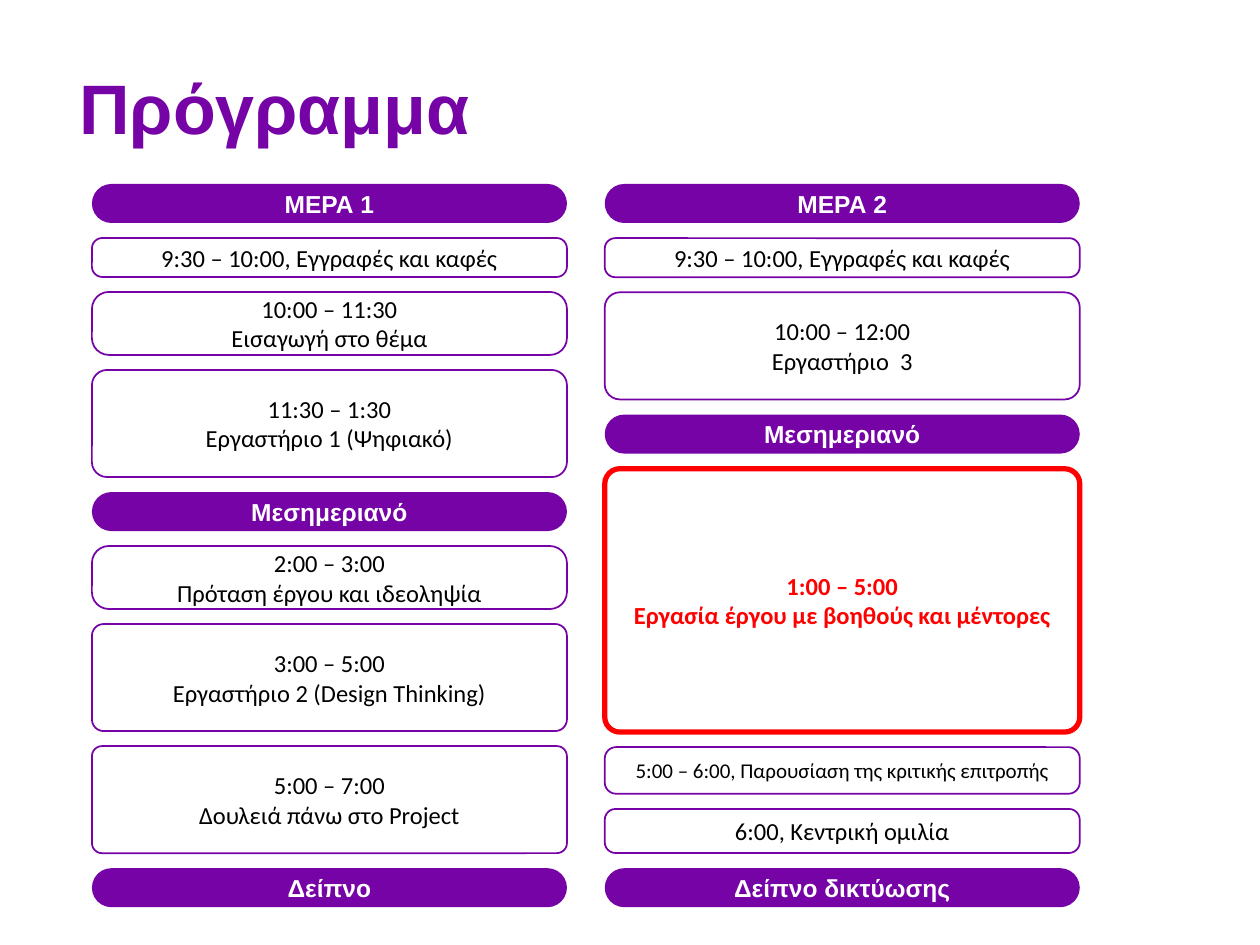
from pptx import Presentation
from pptx.dml.color import RGBColor
from pptx.enum.shapes import MSO_SHAPE
from pptx.enum.text import MSO_ANCHOR, MSO_AUTO_SIZE, PP_ALIGN
from pptx.util import Inches, Pt

ROUNDED = MSO_SHAPE.ROUNDED_RECTANGLE
TOP, MIDDLE = MSO_ANCHOR.TOP, MSO_ANCHOR.MIDDLE
NO_FIT = MSO_AUTO_SIZE.NONE
LEFT, CENTER = PP_ALIGN.LEFT, PP_ALIGN.CENTER

TITLE_ONLY = 5
COLUMNS, ROWS = 100, 75
COLORS = {"purple": "7503A6", "white": "FFFFFF", "black": "000000", "red": "FF0000"}
HEADING = {"name": "Arial", "size": Pt(14), "bold": True}
BODY = {"name": "Calibri", "size": Pt(14), "bold": False}
STYLES = {
    "title": {"font": HEADING | {"size": Pt(40)}, "text": "purple"},
    "band": {"font": HEADING, "text": "white", "fill": "purple", "line": None},
    "session": {"font": BODY, "text": "black", "fill": "white", "line": ("purple", 1)},
    "small": {"font": BODY | {"size": Pt(12)}, "text": "black", "fill": "white",
              "line": ("purple", 1)},
    "highlight": {"font": BODY | {"bold": True}, "text": "red", "fill": "white",
                  "line": ("red", 3)},
}

SCHEDULE_TOP, SCHEDULE_BOTTOM, DAY_WIDTH = 14.6, 72, 37.7
BAND_HEIGHT, BAND_RADIUS = 3.1, 1.55
DAYS = [
    (7.3, [
        ("band", BAND_HEIGHT, BAND_RADIUS, ["ΜΕΡΑ 1"]),
        ("session", 3.1, 0.83, ["9:30 – 10:00, Εγγραφές και καφές"]),
        ("session", 5, 1.35, ["10:00 – 11:30", "Εισαγωγή στο θέμα"]),
        ("session", 8.5, 1.2, ["11:30 – 1:30", "Εργαστήριο 1 (Ψηφιακό)"]),
        ("band", BAND_HEIGHT, BAND_RADIUS, ["Μεσημεριανό"]),
        ("session", 5, 1.35, ["2:00 – 3:00", "Πρόταση έργου και ιδεοληψία"]),
        ("session", 8.5, 0.93, ["3:00 – 5:00", "Εργαστήριο 2 (Design Thinking)"]),
        ("session", 8.5, 0.8, ["5:00 – 7:00", "Δουλειά πάνω στο Project"]),
        ("band", BAND_HEIGHT, BAND_RADIUS, ["Δείπνο"]),
    ]),
    (48, [
        ("band", BAND_HEIGHT, BAND_RADIUS, ["ΜΕΡΑ 2"]),
        ("session", 3.1, 0.83, ["9:30 – 10:00, Εγγραφές και καφές"]),
        ("session", 8.5, 1.2, ["10:00 – 12:00", "Εργαστήριο  3"]),
        ("band", BAND_HEIGHT, BAND_RADIUS, ["Μεσημεριανό"]),
        ("highlight", 20.9, 1.2, ["1:00 – 5:00", "Εργασία έργου με βοηθούς και μέντορες"]),
        ("small", 3.7, 0.9, ["5:00 – 6:00, Παρουσίαση της κριτικής επιτροπής"]),
        ("session", 3.5, 0.86, ["6:00, Κεντρική ομιλία"]),
        ("band", BAND_HEIGHT, BAND_RADIUS, ["Δείπνο δικτύωσης"]),
    ]),
]


def apply_format(target, values):
    """Set every attribute named in a dict of format values."""
    for name, value in values.items():
        setattr(target, name, value)


def color(name):
    """Look up a named colour."""
    return RGBColor.from_string(COLORS[name])


class ProgramSlide:
    """Draws the program's elements on a grid over the current slide."""

    def __init__(self, presentation, styles):
        """Add a slide and measure one grid cell."""
        self.styles = styles
        self.slide = presentation.slides.add_slide(presentation.slide_layouts[TITLE_ONLY])
        self.column = presentation.slide_width / COLUMNS
        self.row = presentation.slide_height / ROWS

    def area(self, left, top, width, height):
        """Turn grid columns and rows into a position and size."""
        return (round(left * self.column), round(top * self.row),
                round(width * self.column), round(height * self.row))

    def fill_text(self, shape, lines, style, anchor, alignment):
        """Fill a shape with one styled paragraph per line."""
        frame = shape.text_frame
        apply_format(frame, {"text": "\n".join(lines), "word_wrap": True,
                             "auto_size": NO_FIT, "vertical_anchor": anchor})
        for paragraph in frame.paragraphs:
            paragraph.alignment = alignment
            font = paragraph.runs[0].font
            apply_format(font, style["font"])
            font.color.rgb = color(style["text"])

    def title(self, text, *box):
        """Place and format the title placeholder."""
        shape = self.slide.shapes.title
        names = ("left", "top", "width", "height")
        apply_format(shape, dict(zip(names, self.area(*box))))
        self.fill_text(shape, [text], self.styles["title"], TOP, LEFT)

    def entry(self, style_name, lines, radius, left, top, width, height):
        """Draw one rounded schedule entry."""
        style = self.styles[style_name]
        shape = self.slide.shapes.add_shape(ROUNDED, *self.area(left, top, width, height))
        shape.shadow.inherit = False
        shape.adjustments[0] = radius / height
        shape.fill.solid()
        shape.fill.fore_color.rgb = color(style["fill"])
        if style["line"]:
            line_color, points = style["line"]
            shape.line.color.rgb = color(line_color)
            shape.line.width = Pt(points)
        else:
            shape.line.fill.background()
        self.fill_text(shape, lines, style, MIDDLE, CENTER)

    def day(self, left, entries):
        """Stack a day's entries with equal gaps from top to bottom."""
        free = SCHEDULE_BOTTOM - SCHEDULE_TOP - sum(height for _, height, _, _ in entries)
        gap = free / (len(entries) - 1)
        top = SCHEDULE_TOP
        for style_name, height, radius, lines in entries:
            self.entry(style_name, lines, radius, left, top, DAY_WIDTH, height)
            top += height + gap


def main():
    """Build and save the program slide."""
    presentation = Presentation()
    apply_format(presentation, {"slide_width": Inches(10), "slide_height": Inches(7.5)})
    program = ProgramSlide(presentation, STYLES)
    program.title("Πρόγραμμα", 5.3, 4.6, 71.1, 7.7)
    for left, entries in DAYS:
        program.day(left, entries)
    presentation.save("out.pptx")


if __name__ == "__main__":
    main()
